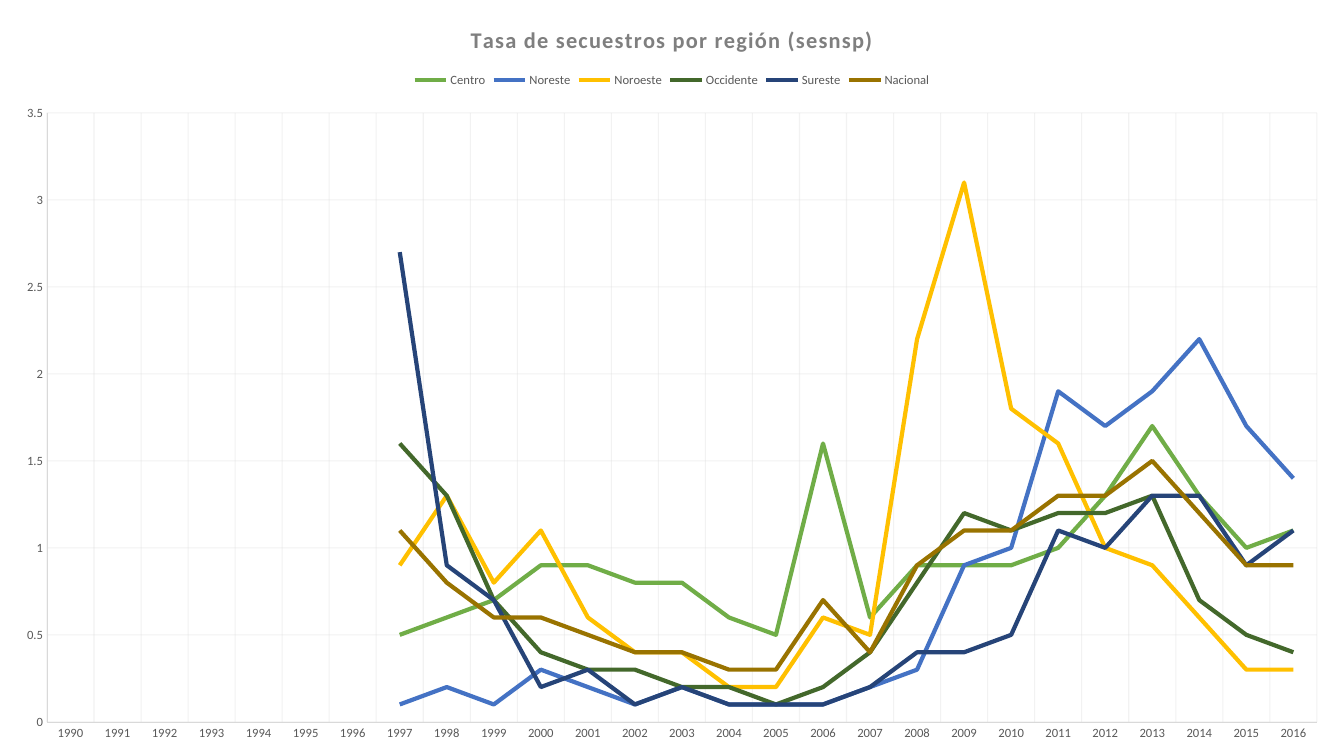
from lxml.etree import SubElement
from pptx import Presentation
from pptx.chart.data import CategoryChartData
from pptx.dml.color import RGBColor
from pptx.enum.chart import XL_CHART_TYPE as ChartType
from pptx.enum.chart import XL_LEGEND_POSITION as LegendPosition
from pptx.enum.chart import XL_MARKER_STYLE as MarkerStyle
from pptx.enum.chart import XL_TICK_MARK as TickMark
from pptx.oxml.ns import qn
from pptx.util import Emu, Pt

WIDTH, HEIGHT = 1344, 756
PLOT = (47, 113, 1270, 609)
TITLE = "Tasa de secuestros por región (sesnsp)"
YEARS = range(1990, 2017)
FIRST_YEAR = 1997
RATES = {
    "Centro": ("70AD47", [0.5, 0.6, 0.7, 0.9, 0.9, 0.8, 0.8, 0.6, 0.5, 1.6,
                          0.6, 0.9, 0.9, 0.9, 1, 1.3, 1.7, 1.3, 1, 1.1]),
    "Noreste": ("4472C4", [0.1, 0.2, 0.1, 0.3, 0.2, 0.1, 0.2, 0.1, 0.1, 0.1,
                           0.2, 0.3, 0.9, 1, 1.9, 1.7, 1.9, 2.2, 1.7, 1.4]),
    "Noroeste": ("FFC000", [0.9, 1.3, 0.8, 1.1, 0.6, 0.4, 0.4, 0.2, 0.2, 0.6,
                            0.5, 2.2, 3.1, 1.8, 1.6, 1, 0.9, 0.6, 0.3, 0.3]),
    "Occidente": ("43682B", [1.6, 1.3, 0.7, 0.4, 0.3, 0.3, 0.2, 0.2, 0.1, 0.2,
                             0.4, 0.8, 1.2, 1.1, 1.2, 1.2, 1.3, 0.7, 0.5, 0.4]),
    "Sureste": ("264478", [2.7, 0.9, 0.7, 0.2, 0.3, 0.1, 0.2, 0.1, 0.1, 0.1,
                           0.2, 0.4, 0.4, 0.5, 1.1, 1, 1.3, 1.3, 0.9, 1.1]),
    "Nacional": ("997300", [1.1, 0.8, 0.6, 0.6, 0.5, 0.4, 0.4, 0.3, 0.3, 0.7,
                            0.4, 0.9, 1.1, 1.1, 1.3, 1.3, 1.5, 1.2, 0.9, 0.9]),
}


def px(length):
    return Emu(round(length * 914400 / 100.8))


def color(hex_code):
    return RGBColor.from_string(hex_code)


def apply(target, values):
    for name, value in values.items():
        setattr(target, name, value)


class RateSlide:
    label = {"name": "Calibri", "size": Pt(9), "bold": False}
    heading = {"name": "Calibri", "size": Pt(16), "bold": True}
    label_color, heading_color, rule_color = "595959", "7F7F7F", "D9D9D9"

    def __init__(self, presentation):
        self.slide = presentation.slides.add_slide(presentation.slide_layouts[6])

    def style_font(self, font, values, hex_code):
        apply(font, values)
        font.color.rgb = color(hex_code)

    def style_line(self, line, hex_code, points):
        line.color.rgb = color(hex_code)
        line.width = Pt(points)

    def add_line_chart(self, rates):
        data = CategoryChartData()
        data.categories = [str(year) for year in YEARS]
        gap = [None] * (FIRST_YEAR - YEARS[0])
        for region, (_, values) in rates.items():
            data.add_series(region, gap + values)
        chart = self.slide.shapes.add_chart(
            ChartType.LINE, 0, 0, px(WIDTH), px(HEIGHT), data).chart
        self.style_font(chart.font, self.label, self.label_color)
        chart.plots[0].vary_by_categories = False
        for series, (hex_code, _) in zip(chart.plots[0].series, rates.values()):
            series.smooth = False
            series.marker.style = MarkerStyle.NONE
            self.style_line(series.format.line, hex_code, 3)
        return chart

    def add_title(self, chart, wording):
        chart.has_title = True
        paragraph = chart.chart_title.text_frame.paragraphs[0]
        run = paragraph.add_run()
        run.text = wording
        self.style_font(run.font, self.heading, self.heading_color)
        run.font._element.set("spc", "100")
        chart.chart_title.include_in_layout = False

    def add_legend(self, chart):
        chart.has_legend = True
        apply(chart.legend, {"position": LegendPosition.TOP,
                             "include_in_layout": False})
        self.style_font(chart.legend.font, self.label, self.label_color)

    def style_axis(self, axis):
        apply(axis, {"major_tick_mark": TickMark.NONE,
                     "minor_tick_mark": TickMark.NONE,
                     "has_major_gridlines": True})
        self.style_font(axis.tick_labels.font, self.label, self.label_color)
        self.style_line(axis.format.line, self.rule_color, 0.25)
        self.style_line(axis.major_gridlines.format.line, self.rule_color, 0.75)
        gridlines = axis._element.find(qn("c:majorGridlines"))
        for shade in gridlines.iter(qn("a:srgbClr")):
            SubElement(shade, qn("a:alpha"), val="32000")

    def place_plot(self, chart, left, top, width, height):
        """Fix the inner plot area, given in px of the slide."""
        area = chart._chartSpace.chart.plotArea
        for automatic in area.findall(qn("c:layout")):
            area.remove(automatic)
        layout = SubElement(area, qn("c:layout"))
        area.insert(0, layout)
        manual = SubElement(layout, qn("c:manualLayout"))
        settings = {"layoutTarget": "inner", "xMode": "edge", "yMode": "edge",
                    "x": left / WIDTH, "y": top / HEIGHT,
                    "w": width / WIDTH, "h": height / HEIGHT}
        for tag, value in settings.items():
            SubElement(manual, qn(f"c:{tag}"), val=str(value))


def main():
    presentation = Presentation()
    apply(presentation, {"slide_width": px(WIDTH), "slide_height": px(HEIGHT)})
    page = RateSlide(presentation)
    kidnappings = page.add_line_chart(RATES)
    page.add_title(kidnappings, TITLE)
    page.add_legend(kidnappings)
    for axis in (kidnappings.category_axis, kidnappings.value_axis):
        page.style_axis(axis)
    apply(kidnappings.value_axis, {"minimum_scale": 0, "maximum_scale": 3.5,
                                   "major_unit": 0.5})
    apply(kidnappings.value_axis.tick_labels, {"number_format": "General",
                                               "number_format_is_linked": False})
    page.place_plot(kidnappings, *PLOT)
    presentation.save("out.pptx")


if __name__ == "__main__":
    main()
